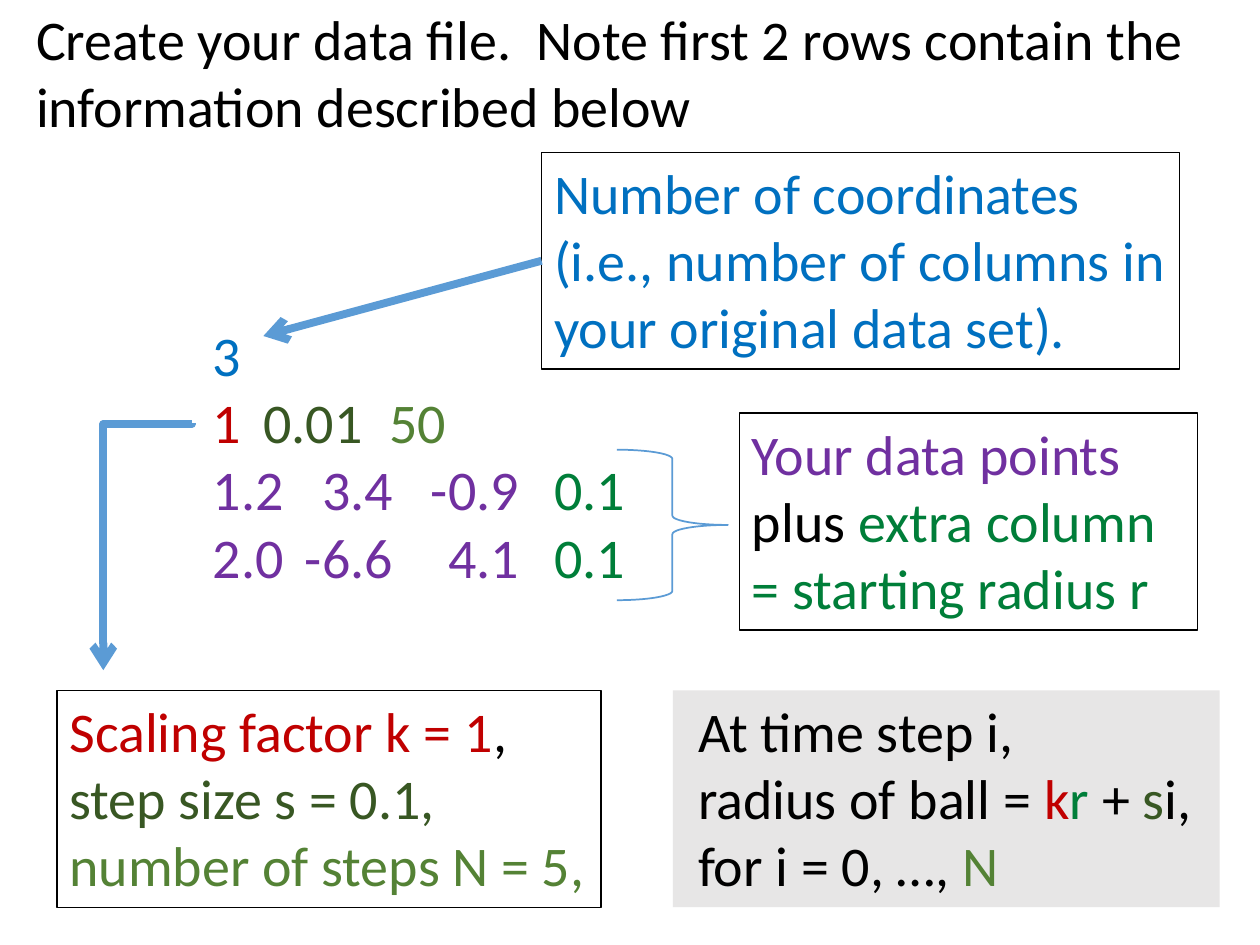
from dataclasses import dataclass

from lxml import etree
from pptx import Presentation
from pptx.dml.color import RGBColor
from pptx.enum.shapes import MSO_CONNECTOR, MSO_SHAPE
from pptx.enum.text import MSO_ANCHOR, PP_ALIGN
from pptx.oxml.ns import qn
from pptx.util import Pt

STRAIGHT, ELBOW = MSO_CONNECTOR.STRAIGHT, MSO_CONNECTOR.ELBOW
RECTANGLE, RIGHT_BRACE = MSO_SHAPE.RECTANGLE, MSO_SHAPE.RIGHT_BRACE
TOP, MIDDLE = MSO_ANCHOR.TOP, MSO_ANCHOR.MIDDLE
LEFT = PP_ALIGN.LEFT
LEFT_SIDE = 1


@dataclass(frozen=True)
class Theme:
    font: str = "Calibri"
    size: float = 32
    ink: str = "000000"
    panel: str = "E7E6E6"
    arrow: str = "5B9BD5"
    coordinates: str = "0070C0"
    scale: str = "C00000"
    step: str = "385723"
    count: str = "548235"
    points: str = "7030A0"
    radius: str = "007E39"
    border_width: float = 0.75
    brace_width: float = 1
    arrow_width: float = 4.5


THEME = Theme()


def rgb(code):
    return RGBColor.from_string(code)


def write(shape, paragraphs, *, anchor=TOP, inset=7.2, tabs=()):
    """Fill a shape with paragraphs of (text, colour) runs; tabs holds (position, alignment) per paragraph."""
    frame = shape.text_frame
    frame.word_wrap = True
    frame.vertical_anchor = anchor
    frame.margin_left = Pt(inset)
    for index, runs in enumerate(paragraphs):
        paragraph = frame.paragraphs[0] if index == 0 else frame.add_paragraph()
        paragraph.alignment = LEFT
        if index < len(tabs):
            set_tabs(paragraph, tabs[index])
        for text, colour in runs:
            run = paragraph.add_run()
            run.text = text
            run.font.name = THEME.font
            run.font.size = Pt(THEME.size)
            run.font.color.rgb = rgb(colour)


def set_tabs(paragraph, stops):
    if not stops:
        return
    tab_list = etree.SubElement(paragraph._p.get_or_add_pPr(), qn("a:tabLst"))
    for position, alignment in stops:
        etree.SubElement(tab_list, qn("a:tab"), pos=str(Pt(position)), algn=alignment)


def add_text(slide, box, paragraphs, **text_format):
    write(slide.shapes.add_textbox(*map(Pt, box)), paragraphs, **text_format)


def add_note(slide, box, paragraphs, *, fill=None, **text_format):
    """Add a bordered note, or a borderless filled one."""
    note = slide.shapes.add_shape(RECTANGLE, *map(Pt, box))
    note.shadow.inherit = False
    if fill:
        note.fill.solid()
        note.fill.fore_color.rgb = rgb(fill)
        note.line.fill.background()
    else:
        note.fill.background()
        note.line.color.rgb = rgb(THEME.ink)
        note.line.width = Pt(THEME.border_width)
    write(note, paragraphs, **text_format)
    return note


def add_brace(slide, box):
    brace = slide.shapes.add_shape(RIGHT_BRACE, *map(Pt, box))
    brace.shadow.inherit = False
    brace.fill.background()
    brace.line.color.rgb = rgb(THEME.arrow)
    brace.line.width = Pt(THEME.brace_width)


def add_arrow(slide, kind, start, end):
    arrow = slide.shapes.add_connector(kind, *map(Pt, (*start, *end)))
    arrow.line.color.rgb = rgb(THEME.arrow)
    arrow.line.width = Pt(THEME.arrow_width)
    etree.SubElement(arrow.line._get_or_add_ln(), qn("a:tailEnd"), type="arrow")
    etree.SubElement(arrow._element.spPr, qn("a:effectLst"))
    return arrow


def add_elbow_arrow(slide, box):
    """Run along the top of the box from its right corner, then down its left side."""
    left, top, width, height = box
    x = left + (width - height) / 2
    y = top + (height - width) / 2
    arrow = add_arrow(slide, ELBOW, (x, y), (x + height, y + width))
    properties = arrow._element.spPr
    properties.find(qn("a:xfrm")).set("rot", str(90 * 60000))
    adjustments = properties.find(qn("a:prstGeom")).find(qn("a:avLst"))
    etree.SubElement(adjustments, qn("a:gd"), name="adj1", fmla="val 300")


def add_data_file(slide, box):
    point_tabs = [(103, "r"), (175, "r"), (195, "l")]
    rows = [
        [("3", THEME.coordinates)],
        [("1\t", THEME.scale), ("0.01\t", THEME.step), ("50", THEME.count)],
    ]
    for values in (("1.2", "3.4", "-0.9"), ("2.0", "-6.6", "4.1")):
        rows.append([("\t".join(values) + "\t", THEME.points), ("0.1", THEME.radius)])
    tabs = [[], [(29, "l"), (101, "l")], point_tabs, point_tabs]
    add_text(slide, box, rows, anchor=MIDDLE, tabs=tabs)


def add_coordinates_note(slide, box, target):
    note = add_note(slide, box, [[(
        "Number of coordinates (i.e., number of columns in your original data set).",
        THEME.coordinates)]])
    left, top, _, height = box
    arrow = add_arrow(slide, STRAIGHT, (left, top + height / 2), target)
    arrow.begin_connect(note, LEFT_SIDE)


def add_points_note(slide, box):
    add_note(slide, box, [[
        ("Your data points ", THEME.points),
        ("plus ", THEME.ink),
        ("extra column = starting radius r", THEME.radius),
    ]])


def add_scaling_note(slide, box):
    add_note(slide, box, [
        [("Scaling factor k = 1", THEME.scale), (",", THEME.ink)],
        [("step size s = 0.1,", THEME.step)],
        [("number of steps N = 5,", THEME.count)],
    ])


def add_radius_note(slide, box):
    add_note(slide, box, [
        [("At time step i,", THEME.ink)],
        [("radius of ball = ", THEME.ink), ("k", THEME.scale), ("r", THEME.radius),
         (" + ", THEME.ink), ("s", THEME.step), ("i,", THEME.ink)],
        [("for i = 0, …, ", THEME.ink), ("N", THEME.count)],
    ], fill=THEME.panel, inset=14.4)


def main():
    deck = Presentation()
    deck.slide_width, deck.slide_height = Pt(720), Pt(540)
    slide = deck.slides.add_slide(deck.slide_layouts[6])
    note_height = 124
    bottom_row = 394.5

    add_text(slide, (13.5, -1, 696, 85), [[(
        "Create your data file.  Note first 2 rows contain the information described below",
        THEME.ink)]])
    add_brace(slide, (352.5, 257, 63.5, 86))
    add_points_note(slide, (422.5, 236, 262, note_height))
    add_coordinates_note(slide, (309.5, 87, 364.5, note_height), target=(150.5, 192))
    add_elbow_arrow(slide, (59, 242, 50.5, 141))
    add_scaling_note(slide, (32.5, bottom_row, 311, note_height))
    add_radius_note(slide, (384.5, bottom_row, 312.5, note_height))
    add_data_file(slide, (114.5, 178.5, 261.5, 163))
    deck.save("out.pptx")


if __name__ == "__main__":
    main()
